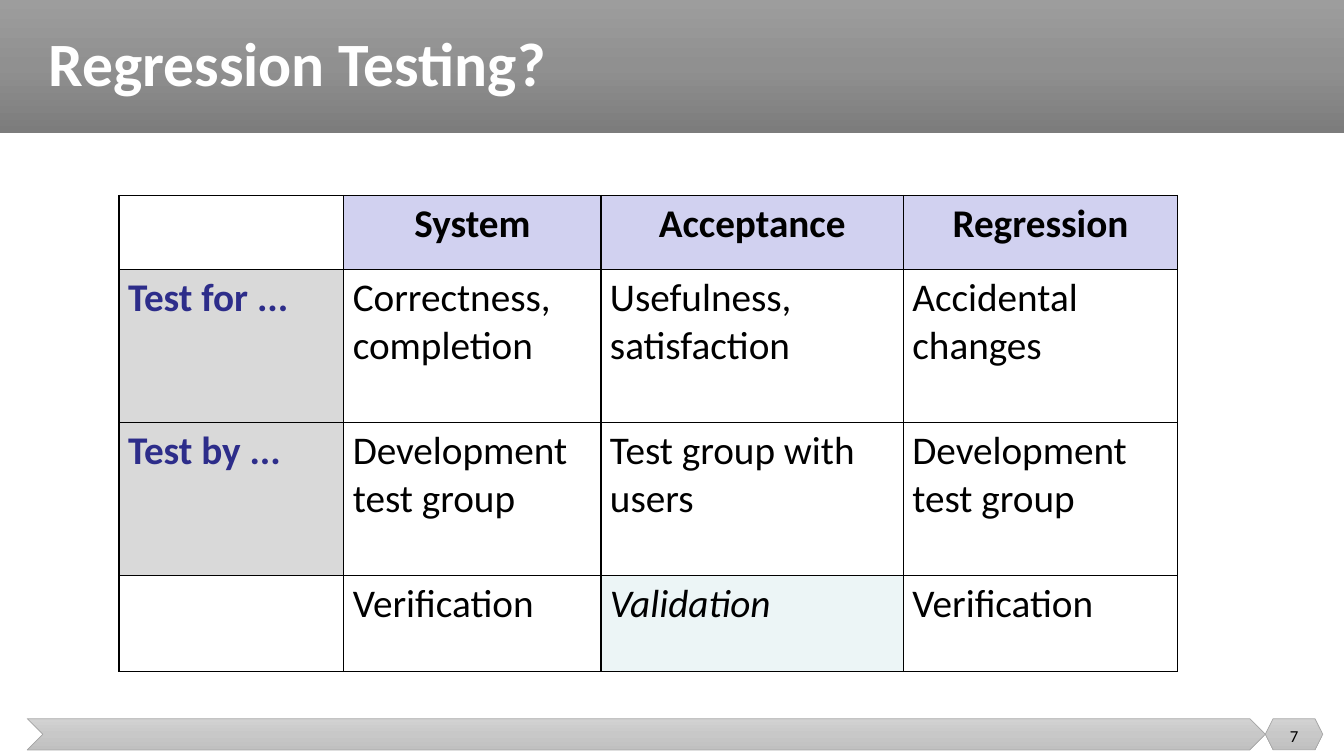
from dataclasses import dataclass

from lxml import etree
from pptx import Presentation
from pptx import util as u
from pptx.dml.color import RGBColor
from pptx.enum import shapes, text
from pptx.oxml.ns import qn

FONT = "Calibri"
BLACK, WHITE, NAVY = "000000", "FFFFFF", "2D2D8A"
LAVENDER, GREY, MINT = "D1D1F0", "D9D9D9", "DAEDEF"
HEADER_GRADIENT = ("9D9D9D", "909090", "7C7C7C")
FOOTER_GRADIENT = ("D2D2D2", "C8C8C8", "C0C0C0")


def px(n: int) -> u.Emu:
    """Convert px, 100 to the inch, into EMU."""
    return u.Emu(n * 9144)


def rgb(value: str) -> RGBColor:
    return RGBColor.from_string(value)


@dataclass
class Band:
    kind: shapes.MSO_SHAPE
    box: tuple[int, int, int, int]
    gradient: tuple[str, str, str]
    line: str = ""


@dataclass
class Cell:
    words: str = ""
    fill: str = ""
    color: str = BLACK
    bold: bool = False
    italic: bool = False
    centred: bool = False
    opacity: int = 100


def head(words: str) -> Cell:
    return Cell(words, LAVENDER, bold=True, centred=True)


def label(words: str) -> Cell:
    return Cell(words, GREY, NAVY, bold=True)


BANDS = [
    Band(shapes.MSO_SHAPE.RECTANGLE, (0, 0, 1333, 132), HEADER_GRADIENT),
    Band(shapes.MSO_SHAPE.CHEVRON, (27, 713, 1228, 31), FOOTER_GRADIENT, "A5A5A5"),
    Band(shapes.MSO_SHAPE.HEXAGON, (1255, 713, 57, 31), FOOTER_GRADIENT, "A5A5A5"),
]
COLUMNS = [223, 255, 300, 272]
ROWS = [73, 152, 152, 95]
CELLS = [
    [Cell(), head("System"), head("Acceptance"), head("Regression")],
    [label("Test for ..."), Cell("Correctness, completion"),
     Cell("Usefulness, satisfaction"), Cell("Accidental changes")],
    [label("Test by ..."), Cell("Development test group"),
     Cell("Test group with users"), Cell("Development test group")],
    [Cell(), Cell("Verification"),
     Cell("Validation", MINT, italic=True, opacity=51), Cell("Verification")],
]


def set_font(p, size: int, color: str, bold: bool = False, italic: bool = False) -> None:
    p.font.name, p.font.size = FONT, u.Pt(size)
    p.font.bold, p.font.italic = bold, italic
    p.font.color.rgb = rgb(color)


def add_band(slide, band: Band) -> None:
    sp = slide.shapes.add_shape(band.kind, *map(px, band.box))
    sp.shadow.inherit = False
    sp.fill.gradient()
    sp.fill.gradient_angle = 270
    stops = sp._element.spPr.find(".//" + qn("a:gsLst"))
    stops.clear()
    for i, color in enumerate(band.gradient):
        stop = etree.SubElement(stops, qn("a:gs"), pos=str(i * 50000))
        etree.SubElement(stop, qn("a:srgbClr"), val=color)
    if band.line:
        sp.line.color.rgb = rgb(band.line)
        sp.line.width = u.Pt(0.5)
    else:
        sp.line.fill.background()


def add_borders(cell) -> None:
    props = cell._tc.get_or_add_tcPr()
    for i, side in enumerate(("a:lnL", "a:lnR", "a:lnT", "a:lnB")):
        line = etree.Element(qn(side), w=str(u.Pt(1)))
        fill = etree.SubElement(line, qn("a:solidFill"))
        etree.SubElement(fill, qn("a:srgbClr"), val=BLACK)
        props.insert(i, line)


def fill_cell(cell, item: Cell) -> None:
    cell.margin_left = cell.margin_right = px(9)
    cell.margin_top = cell.margin_bottom = px(5)
    if item.fill:
        cell.fill.solid()
        cell.fill.fore_color.rgb = rgb(item.fill)
    else:
        cell.fill.background()
    if item.opacity < 100:
        color = cell._tc.tcPr.find(".//" + qn("a:srgbClr"))
        etree.SubElement(color, qn("a:alpha"), val=str(item.opacity * 1000))
    add_borders(cell)
    if item.words:
        p = cell.text_frame.paragraphs[0]
        p.text = item.words
        p.alignment = text.PP_ALIGN.CENTER if item.centred else text.PP_ALIGN.LEFT
        set_font(p, 28, item.color, item.bold, item.italic)


def add_comparison(slide) -> None:
    frame = slide.shapes.add_table(len(ROWS), len(COLUMNS), px(118), px(194),
                                   px(sum(COLUMNS)), px(sum(ROWS)))
    table = frame.table
    table.first_row = table.horz_banding = False
    for column, width in zip(table.columns, COLUMNS):
        column.width = px(width)
    for row, height, items in zip(table.rows, ROWS, CELLS):
        row.height = px(height)
        for cell, item in zip(row.cells, items):
            fill_cell(cell, item)


def format_title(slide) -> None:
    title = slide.shapes.title
    slide.shapes._spTree.append(title._element)  # in front of the header band
    title.left, title.top, title.width, title.height = map(px, (38, 0, 1274, 132))
    tf = title.text_frame
    tf.text = "Regression Testing?"
    tf.vertical_anchor = text.MSO_ANCHOR.MIDDLE
    tf.auto_size = text.MSO_AUTO_SIZE.NONE
    p = tf.paragraphs[0]
    p.alignment = text.PP_ALIGN.LEFT
    p.line_spacing = 0.9
    set_font(p, 44, WHITE, bold=True)


def add_page_number(slide) -> None:
    tf = slide.shapes.add_textbox(*map(px, (1255, 710, 57, 40))).text_frame
    tf.word_wrap = True
    tf.vertical_anchor = text.MSO_ANCHOR.MIDDLE
    p = tf.paragraphs[0]
    p.text = "7"
    p.alignment = text.PP_ALIGN.CENTER
    set_font(p, 12, BLACK)


def main() -> None:
    prs = Presentation()
    prs.slide_width, prs.slide_height = px(1333), px(750)
    slide = prs.slides.add_slide(prs.slide_layouts[5])

    # Header and footer bands
    for band in BANDS:
        add_band(slide, band)

    # Title, table and page number
    format_title(slide)
    add_comparison(slide)
    add_page_number(slide)
    prs.save("out.pptx")


if __name__ == "__main__":
    main()
